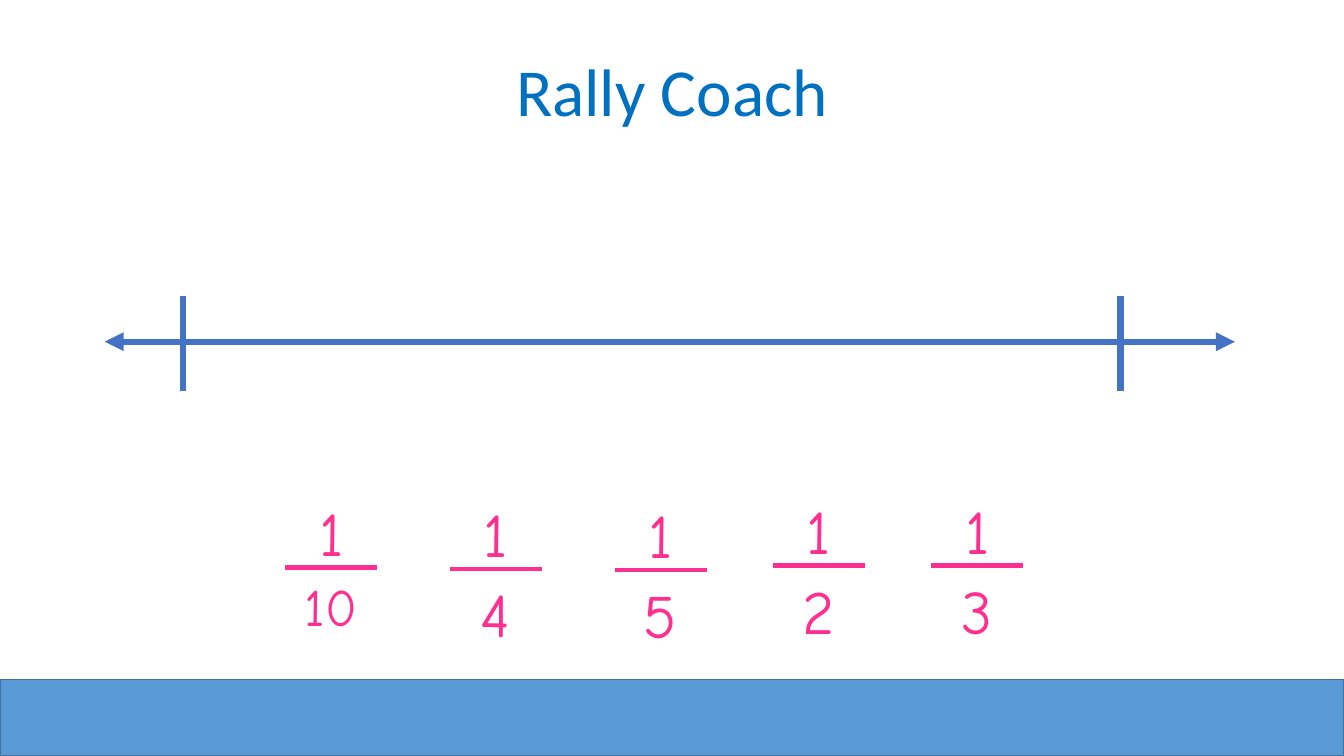
from lxml.etree import SubElement
from pptx import Presentation
from pptx.dml.color import RGBColor
from pptx.enum.shapes import MSO_CONNECTOR, MSO_SHAPE
from pptx.enum.text import PP_ALIGN
from pptx.oxml.ns import qn
from pptx.util import Cm, Pt

SLIDE_W, SLIDE_H = 33.87, 19.05
BLUE, PINK = "4472C4", "FF2F92"
# numerator, denominator, denominator size, left, top
FRACTIONS = [
    ("1", "10", 37.4, 7.19, 12.34),
    ("1", "4", 44, 11.33, 12.37),
    ("1", "5", 44, 15.49, 12.4),
    ("1", "2", 44, 19.48, 12.29),
    ("1", "3", 44, 23.47, 12.29),
]


def rgb(value):
    return RGBColor.from_string(value)


def add_text(shapes, text, x, y, w, h, color, **font):
    tf = shapes.add_textbox(Cm(x), Cm(y), Cm(w), Cm(h)).text_frame
    tf.word_wrap = True
    p = tf.paragraphs[0]
    p.alignment = PP_ALIGN.CENTER
    r = p.add_run()
    r.text = text
    r.font.color.rgb = rgb(color)
    for name, value in font.items():
        setattr(r.font, name, value)
    return p


def add_line(shapes, x1, y1, x2, y2, color, width):
    line = shapes.add_connector(MSO_CONNECTOR.STRAIGHT, Cm(x1), Cm(y1), Cm(x2), Cm(y2))
    line.line.color.rgb = rgb(color)
    line.line.width = Pt(width)
    SubElement(line._element.spPr, qn("a:effectLst"))
    return line


def add_footer_bar(s, x, y, w, h):
    bar = s.shapes.add_shape(MSO_SHAPE.RECTANGLE, Cm(x), Cm(y), Cm(w), Cm(h))
    bar.shadow.inherit = False
    bar.fill.solid()
    bar.fill.fore_color.rgb = rgb("5B9BD5")
    bar.line.color.rgb = rgb("43739E")
    bar.line.width = Pt(1)


def add_number_line(s, x, y, w, h):
    """Draw a double-headed axis across the box, with a tick near each end."""
    middle = y + h / 2 - 0.05
    axis = add_line(s.shapes, x, middle, x + w, middle, BLUE, 4.5)
    for end in ("a:headEnd", "a:tailEnd"):
        SubElement(axis.line._get_or_add_ln(), qn(end), type="triangle")
    for tick in (x + 1.98, x + w - 2.88):
        add_line(s.shapes, tick, y, tick, y + h, BLUE, 4.5)


def add_fraction(s, numerator, denominator, size, x, y, w=2.32):
    shapes = s.shapes.add_group_shape().shapes
    add_line(shapes, x, y + 1.96, x + w, y + 1.96, PINK, 3)
    for text, points, inset, dy, h in (
        (numerator, 44, 0, 0, 2.44),
        (denominator, size, 0.17, 2.01, 2.77),
    ):
        p = add_text(shapes, text, x + inset, y + dy, w - 2 * inset, h, PINK,
                     name="Comic Neue", size=Pt(points))
        before = SubElement(p._p.get_or_add_pPr(), qn("a:spcBef"))
        SubElement(before, qn("a:spcPct"), val="20000")


def main():
    prs = Presentation()
    prs.slide_width, prs.slide_height = Cm(SLIDE_W), Cm(SLIDE_H)
    s = prs.slides.add_slide(prs.slide_layouts[6])
    add_footer_bar(s, 0, 17.12, SLIDE_W, 1.93)
    add_text(s.shapes, "Rally Coach", 1.7, 1.12, 30.48, 2.31, "0070C0",
             name="Calibri", size=Pt(48))
    add_number_line(s, 2.64, 7.46, 28.48, 2.4)
    for fraction in FRACTIONS:
        add_fraction(s, *fraction)
    prs.save("out.pptx")


if __name__ == "__main__":
    main()
